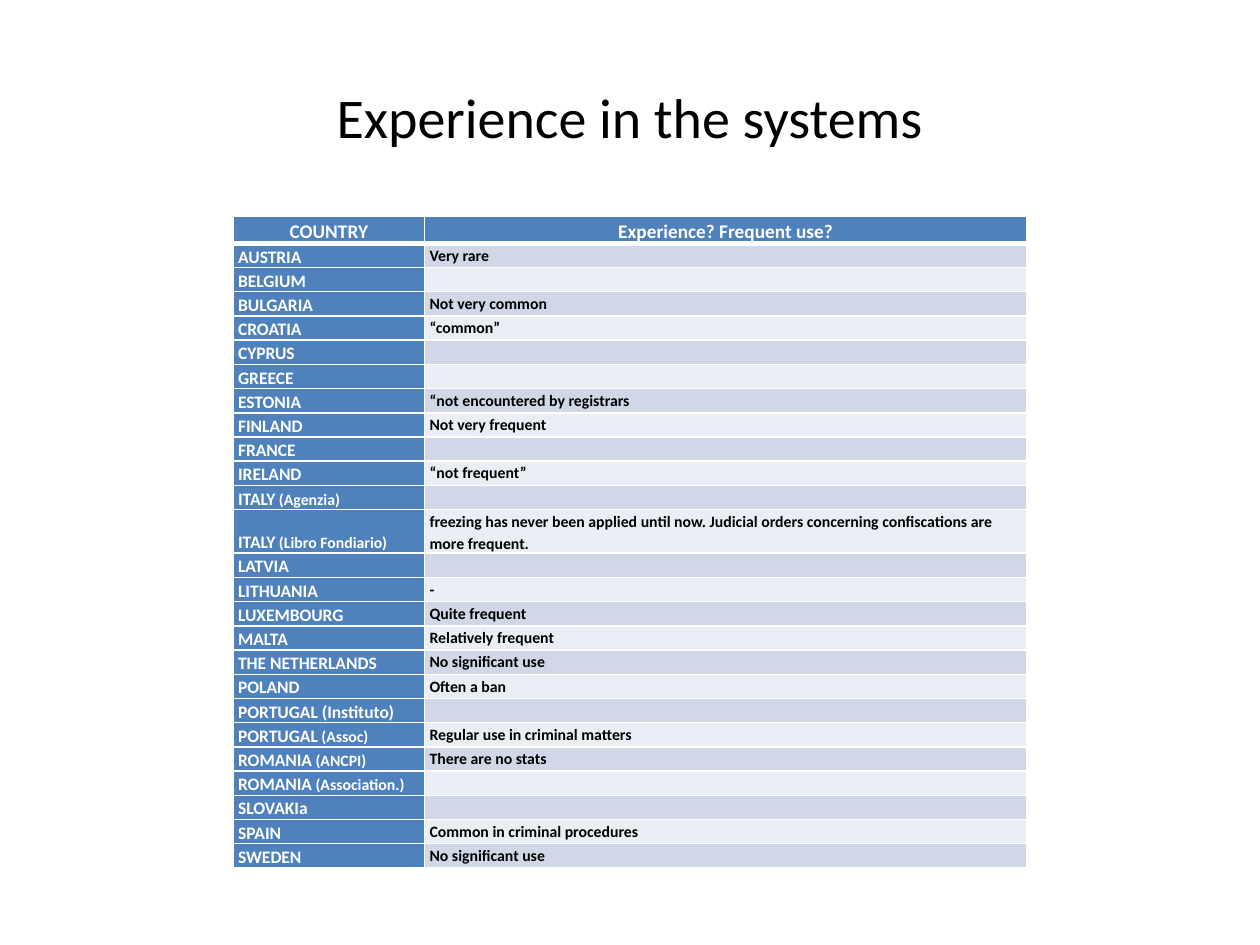
from lxml.etree import SubElement
from pptx import Presentation
from pptx.dml.color import RGBColor
from pptx.enum.text import MSO_ANCHOR as Anchor, PP_ALIGN as Align
from pptx.oxml.ns import qn
from pptx.util import Inches, Pt

FONT = "Calibri"
COLORS = {
    "text": "000000",
    "white": "FFFFFF",
    "header": "4F81BD",
    "odd": "D0D8E8",
    "even": "E9EDF4",
}
SLIDE_WIDTH, SLIDE_HEIGHT = Inches(10), Inches(7.5)
COLUMN_WIDTHS = (1.52, 4.78)
HEADER_HEIGHT, ROW_HEIGHT = 0.21, 0.19
HEADINGS = ("COUNTRY", "Experience? Frequent use?")

# Country, smaller note beside it, answer
ANSWERS = [
    ("AUSTRIA", "", "Very rare"),
    ("BELGIUM", "", ""),
    ("BULGARIA", "", "Not very common"),
    ("CROATIA", "", "“common”"),
    ("CYPRUS", "", ""),
    ("GREECE", "", ""),
    ("ESTONIA", "", "“not encountered by registrars"),
    ("FINLAND", "", "Not very frequent"),
    ("FRANCE", "", ""),
    ("IRELAND", "", "“not frequent”"),
    ("ITALY", " (Agenzia)", ""),
    ("ITALY", " (Libro Fondiario)",
     "freezing has never been applied until now. "
     "Judicial orders concerning confiscations are more frequent."),
    ("LATVIA", "", ""),
    ("LITHUANIA", "", "-"),
    ("LUXEMBOURG", "", "Quite frequent"),
    ("MALTA", "", "Relatively frequent"),
    ("THE NETHERLANDS", "", "No significant use"),
    ("POLAND", "", "Often a ban"),
    ("PORTUGAL (Instituto)", "", ""),
    ("PORTUGAL", " (Assoc)", "Regular use in criminal matters"),
    ("ROMANIA", " (ANCPI)", "There are no stats"),
    ("ROMANIA", " (Association.)", ""),
    ("SLOVAKIa", "", ""),
    ("SPAIN", "", "Common in criminal procedures"),
    ("SWEDEN", "", "No significant use"),
]


def rgb(name):
    return RGBColor.from_string(COLORS[name])


def format_run(run, size, color, bold=False):
    run.font.name = FONT
    run.font.size = Pt(size)
    run.font.bold = bold
    run.font.color.rgb = rgb(color)


def add_title(slide, title):
    box = slide.shapes.add_textbox(
        int(SLIDE_WIDTH * 0.05), int(SLIDE_HEIGHT * 0.04),
        int(SLIDE_WIDTH * 0.9), Inches(1.25))
    frame = box.text_frame
    frame.word_wrap = True
    frame.vertical_anchor = Anchor.MIDDLE
    frame.text = title
    heading = frame.paragraphs[0]
    heading.alignment = Align.CENTER
    format_run(heading.runs[0], 32, "text")


def set_borders(cell, top=1, bottom=1):
    """Draw white cell edges, with widths in points; call before filling."""
    properties = cell._tc.get_or_add_tcPr()
    for edge, width in (("L", 1), ("R", 1), ("T", top), ("B", bottom)):
        line = SubElement(properties, qn(f"a:ln{edge}"), w=str(Pt(width)))
        fill = SubElement(line, qn("a:solidFill"))
        SubElement(fill, qn("a:srgbClr"), val=COLORS["white"])


def fill_cell(cell, parts, fill, color, anchor, align=Align.LEFT, **borders):
    """Style a cell and write its (text, size) parts as bold runs."""
    set_borders(cell, **borders)
    cell.fill.solid()
    cell.fill.fore_color.rgb = rgb(fill)
    cell.margin_left = cell.margin_right = Inches(0.04)
    cell.margin_top = cell.margin_bottom = 0
    cell.vertical_anchor = anchor
    paragraph = cell.text_frame.paragraphs[0]
    paragraph.alignment = align
    paragraph.line_spacing = 1.15
    for text, size in parts:
        if text:
            run = paragraph.add_run()
            run.text = text
            format_run(run, size, color, bold=True)
    if not paragraph.runs:
        # Keeps an empty cell from stretching its row
        SubElement(paragraph._p, qn("a:endParaRPr"), sz="900")


def add_answer_table(slide):
    width = Inches(sum(COLUMN_WIDTHS))
    height = Inches(HEADER_HEIGHT + ROW_HEIGHT * len(ANSWERS))
    table = slide.shapes.add_table(
        len(ANSWERS) + 1, len(COLUMN_WIDTHS),
        (SLIDE_WIDTH - width) // 2, Inches(1.72), width, height).table
    table.first_col = True
    for column, column_width in zip(table.columns, COLUMN_WIDTHS):
        column.width = Inches(column_width)
    for index, row in enumerate(table.rows):
        row.height = Inches(ROW_HEIGHT if index else HEADER_HEIGHT)

    for column, (heading, anchor) in enumerate(
            zip(HEADINGS, (Anchor.MIDDLE, Anchor.TOP))):
        fill_cell(table.cell(0, column), [(heading, 11)], "header", "white",
                  anchor, Align.CENTER, bottom=3)

    for index, (country, note, answer) in enumerate(ANSWERS, start=1):
        top = 3 if index == 1 else 1
        band = "odd" if index % 2 else "even"
        fill_cell(table.cell(index, 0), [(country, 10), (note, 9)],
                  "header", "white", Anchor.BOTTOM, top=top)
        fill_cell(table.cell(index, 1), [(answer, 9)],
                  band, "text", Anchor.TOP, top=top)


def main():
    deck = Presentation()
    deck.slide_width, deck.slide_height = SLIDE_WIDTH, SLIDE_HEIGHT
    slide = deck.slides.add_slide(deck.slide_layouts[6])
    add_title(slide, "Experience in the systems")
    add_answer_table(slide)
    deck.save("out.pptx")


if __name__ == "__main__":
    main()
